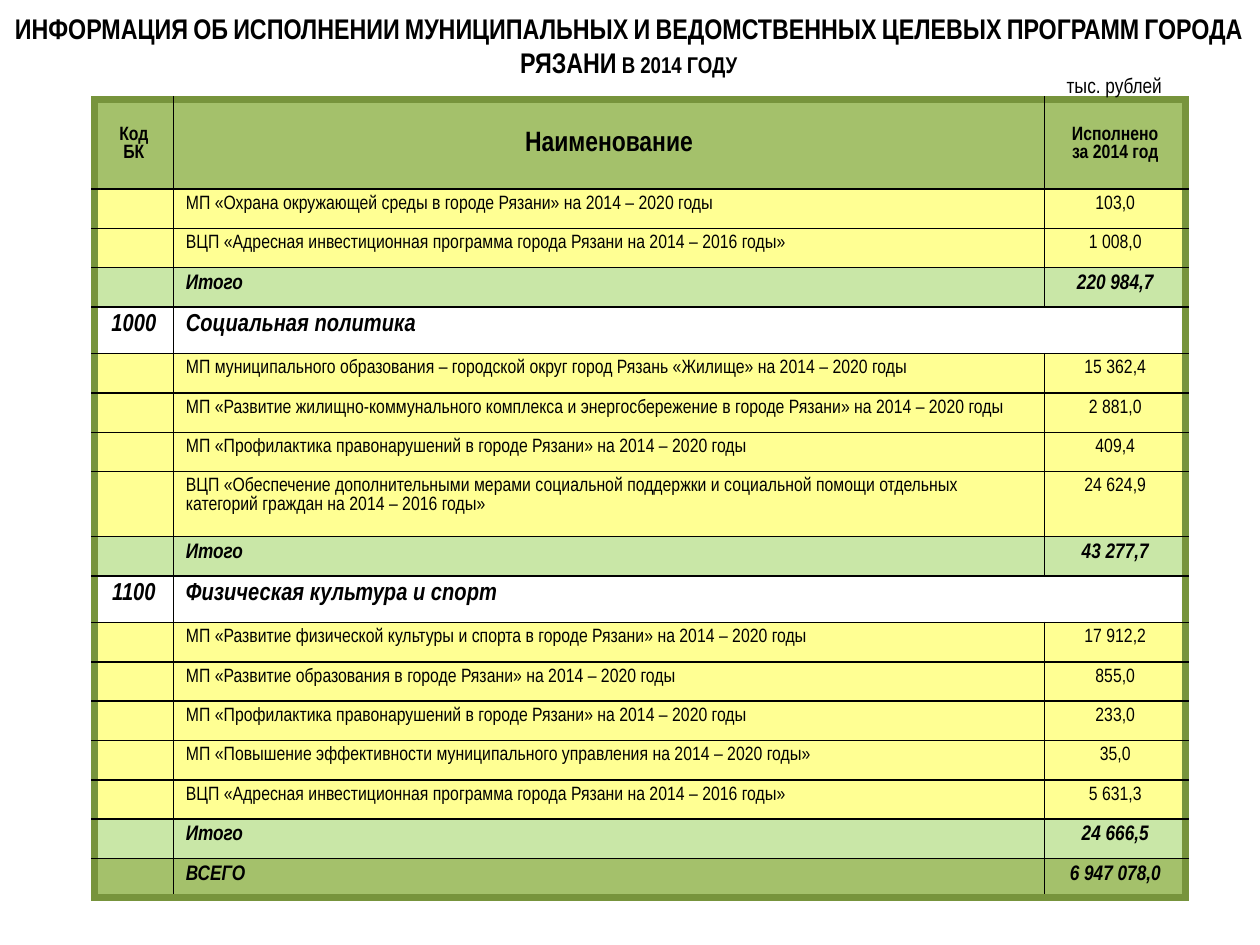
from dataclasses import dataclass

from lxml import etree
from pptx import Presentation
from pptx.dml.color import RGBColor
from pptx.enum.text import MSO_ANCHOR, PP_ALIGN
from pptx.oxml.ns import qn
from pptx.util import Pt

LEFT, MID = PP_ALIGN.LEFT, PP_ALIGN.CENTER
TOP, CORE = MSO_ANCHOR.TOP, MSO_ANCHOR.MIDDLE
SCALE = 914400 // 192  # EMU in one px


@dataclass(frozen=True)
class Theme:
    font: str = "Arial Narrow"
    ink: str = "000000"
    frame: str = "77943C"
    head: str = "A4C16B"
    item: str = "FFFF93"
    total: str = "C9E7A7"
    plain: str = "FFFFFF"
    title: float = 16.2
    name: float = 16
    group: float = 14
    sum: float = 12
    body: float = 11
    thin: float = 1
    thick: float = 4.5


@dataclass(frozen=True)
class Kind:
    fill: str
    size: float
    high: int
    bold: bool = False
    slant: bool = False


@dataclass(frozen=True)
class Row:
    kind: Kind
    name: str
    value: str = ""
    code: str = ""


T = Theme()
HEAD = Kind(T.head, T.body, 136, bold=True)
ITEM = Kind(T.item, T.body, 60)
TALL = Kind(T.item, T.body, 99)
SUM = Kind(T.total, T.sum, 60, bold=True, slant=True)
GROUP = Kind(T.plain, T.group, 71, bold=True, slant=True)
GRAND = Kind(T.head, T.sum, 60, bold=True, slant=True)

COLS = (120, 1328, 215)
ROWS = (
    Row(HEAD, "Наименование", "Исполнено\nза 2014 год", "Код БК"),
    Row(ITEM, "МП «Охрана окружающей среды в городе Рязани» на 2014 – 2020 годы", "103,0"),
    Row(ITEM, "ВЦП «Адресная инвестиционная программа города Рязани на 2014 – 2016 годы»", "1 008,0"),
    Row(SUM, "Итого", "220 984,7"),
    Row(GROUP, "Социальная политика", code="1000"),
    Row(ITEM, "МП муниципального образования – городской округ город Рязань «Жилище» "
        "на 2014 – 2020 годы", "15 362,4"),
    Row(ITEM, "МП «Развитие жилищно-коммунального комплекса и энергосбережение "
        "в городе Рязани» на 2014 – 2020 годы", "2 881,0"),
    Row(ITEM, "МП «Профилактика правонарушений в городе Рязани» на 2014 – 2020 годы", "409,4"),
    Row(TALL, "ВЦП «Обеспечение дополнительными мерами социальной поддержки и социальной "
        "помощи отдельных категорий граждан на 2014 – 2016 годы»", "24 624,9"),
    Row(SUM, "Итого", "43 277,7"),
    Row(GROUP, "Физическая культура и спорт", code="1100"),
    Row(ITEM, "МП «Развитие физической культуры и спорта в городе Рязани» на 2014 – 2020 годы",
        "17 912,2"),
    Row(ITEM, "МП «Развитие образования в городе Рязани» на 2014 – 2020 годы", "855,0"),
    Row(ITEM, "МП «Профилактика правонарушений в городе Рязани» на 2014 – 2020 годы", "233,0"),
    Row(ITEM, "МП «Повышение эффективности муниципального управления на 2014 – 2020 годы»", "35,0"),
    Row(ITEM, "ВЦП «Адресная инвестиционная программа города Рязани на 2014 – 2016 годы»", "5 631,3"),
    Row(SUM, "Итого", "24 666,5"),
    Row(GRAND, "ВСЕГО", "6 947 078,0"),
)


def px(*nums: int) -> list[int]:
    return [num * SCALE for num in nums]


def write(frame, text: str, size: float, align=MID, bold=False, slant=False) -> None:
    frame.text = text
    for para in frame.paragraphs:
        para.alignment = align
        for run in para.runs:
            font = run.font
            font.name, font.size = T.font, Pt(size)
            font.bold, font.italic = bold, slant
            font.color.rgb = RGBColor.from_string(T.ink)
        if not para.runs:  # keeps empty cells from growing
            etree.SubElement(para._p, qn("a:endParaRPr"), sz=str(int(size * 100)))


def label(slide, text: str, box: tuple[int, ...], size: float, anchor, bold=False):
    frame = slide.shapes.add_textbox(*px(*box)).text_frame
    frame.word_wrap = True
    frame.vertical_anchor = anchor
    frame.margin_left = frame.margin_right = 0
    write(frame, text, size, bold=bold)
    return frame


def edge(cell, side: str, outer: bool) -> None:
    color, width = (T.frame, T.thick) if outer else (T.ink, T.thin)
    line = etree.SubElement(cell._tc.get_or_add_tcPr(), qn("a:ln" + side), w=str(Pt(width)))
    fill = etree.SubElement(line, qn("a:solidFill"))
    etree.SubElement(fill, qn("a:srgbClr"), val=color)


def draw_row(table, y: int, row: Row) -> None:
    kind = row.kind
    table.rows[y].height = kind.high * SCALE
    wide = kind is GROUP
    if wide:
        table.cell(y, 1).merge(table.cell(y, 2))
    for x, text in enumerate((row.code, row.name, row.value)):
        cell = table.cell(y, x)
        main = x == 1
        big = kind is HEAD and main
        write(cell.text_frame, text, T.name if big else kind.size,
              LEFT if main and kind is not HEAD else MID, kind.bold, kind.slant)
        cell.vertical_anchor = CORE if kind is HEAD else TOP
        # Borders go before the fill
        edge(cell, "L", x == 0)
        edge(cell, "R", x == 2 or wide and main)
        edge(cell, "T", y == 0)
        edge(cell, "B", y == len(ROWS) - 1)
        cell.fill.solid()
        cell.fill.fore_color.rgb = RGBColor.from_string(kind.fill)


def main() -> None:
    deck = Presentation()
    deck.slide_width, deck.slide_height = px(1920, 1440)
    slide = deck.slides.add_slide(deck.slide_layouts[6])

    # Title in small capitals
    title = label(slide, "ИНФОРМАЦИЯ ОБ ИСПОЛНЕНИИ МУНИЦИПАЛЬНЫХ И ВЕДОМСТВЕННЫХ ЦЕЛЕВЫХ "
                  "ПРОГРАММ ГОРОДА РЯЗАНИ в 2014 году", (2, 8, 1912, 90), T.title, TOP, bold=True)
    title.paragraphs[0].runs[0].font._element.set("cap", "small")

    # Programme table
    high = sum(row.kind.high for row in ROWS)
    table = slide.shapes.add_table(len(ROWS), len(COLS), *px(144, 152, sum(COLS), high)).table
    table.first_row = table.horz_banding = False
    for col, wide in zip(table.columns, COLS):
        col.width = wide * SCALE
    for y, row in enumerate(ROWS):
        draw_row(table, y, row)

    # Unit of measure
    label(slide, "тыс. рублей", (1535, 109, 326, 42), T.sum, CORE)
    deck.save("out.pptx")


if __name__ == "__main__":
    main()
